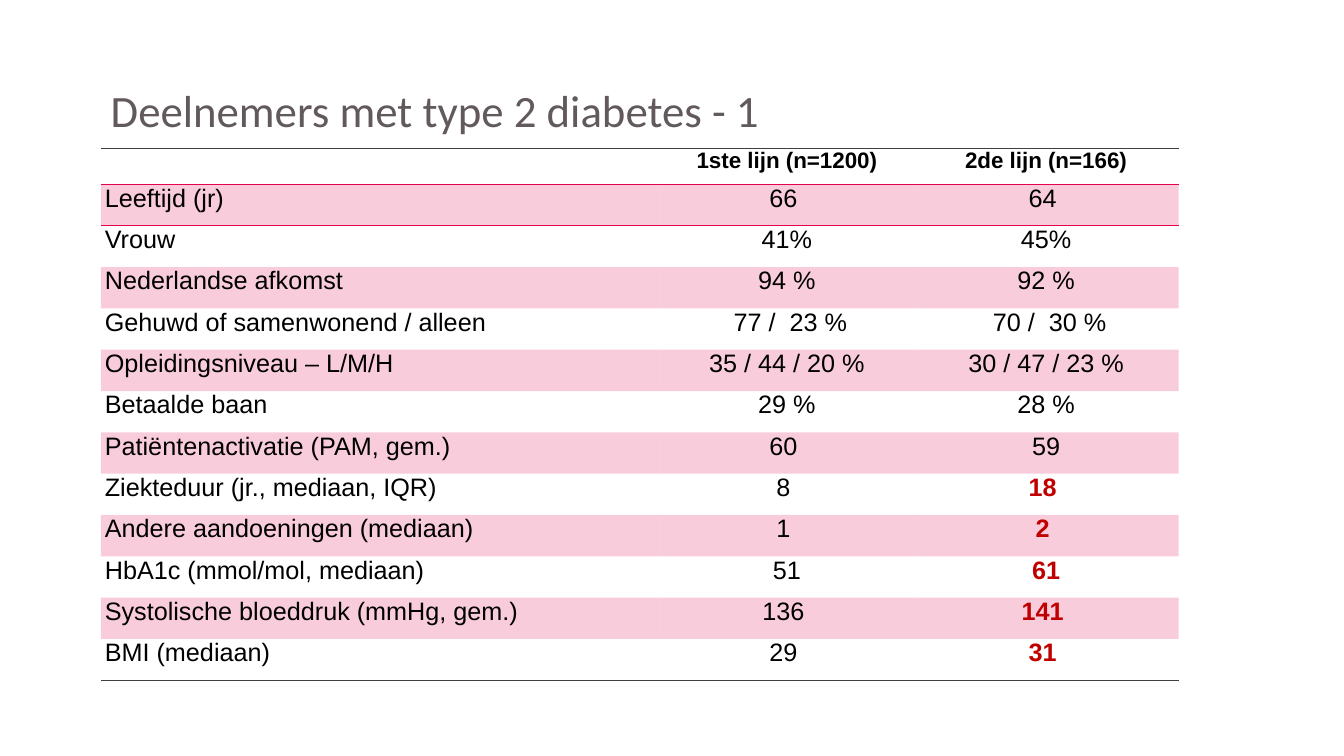
from lxml import etree
from pptx import Presentation, util as u
from pptx.dml.color import RGBColor
from pptx.enum import text as t
from pptx.oxml import ns

PINK, RED, DARK = "E50051", "C00000", "404040"
PLAIN = "{2D5ABB26-0587-4C30-8999-92F81FD0307C}"


def paint(fill, color):
    fill.solid()
    fill.fore_color.rgb = RGBColor.from_string(color)


def write(frame, words, size=18, font="Arial", color="000000", bold=False,
          align=t.PP_ALIGN.LEFT, space=1.0):
    para = frame.paragraphs[0]
    para.alignment = align
    para.line_spacing = space
    para.font.size = u.Pt(size)
    run = para.add_run()
    run.text = words
    run.font.size = u.Pt(size)
    run.font.name = font
    run.font.bold = bold
    paint(run.font.fill, color)


rows = [
    ("", "1ste lijn (n=1200)", "2de lijn (n=166)"),
    ("Leeftijd (jr)", "66 ", "64 "),
    ("Vrouw", "41%", "45%"),
    ("Nederlandse afkomst", "94 %", "92 %"),
    ("Gehuwd of samenwonend / alleen", " 77 /  23 %", " 70 /  30 %"),
    ("Opleidingsniveau – L/M/H", "35 / 44 / 20 %", "30 / 47 / 23 %"),
    ("Betaalde baan", "29 %", "28 %"),
    ("Patiëntenactivatie (PAM, gem.)", "60 ", "59"),
    ("Ziekteduur (jr., mediaan, IQR)", "8 ", "18 "),
    ("Andere aandoeningen (mediaan)", "1 ", "2 "),
    ("HbA1c (mmol/mol, mediaan)", " 51 ", " 61 "),
    ("Systolische bloeddruk (mmHg, gem.)", "136 ", "141 "),
    ("BMI (mediaan)", "29 ", "31 "),
]
last = len(rows) - 1
first_red = 8
widths = (5.55, 2.51, 2.63)
head, step = 0.36, 0.41
left, top = 1, 1.47

deck = Presentation()
deck.slide_width, deck.slide_height = u.Inches(13.33), u.Inches(7.5)
slide = deck.slides.add_slide(deck.slide_layouts[6])

grid = slide.shapes.add_table(
    len(rows), len(widths), u.Inches(left), u.Inches(top),
    u.Inches(sum(widths)), u.Inches(head + last * step)).table
grid.horz_banding = False
grid._tbl.tblPr.find(ns.qn("a:tableStyleId")).text = PLAIN
for col, width in zip(grid.columns, widths):
    col.width = u.Inches(width)

for r, row in enumerate(rows):
    grid.rows[r].height = u.Inches(step if r else head)
    lines = {0: {"lnT": DARK, "lnB": PINK}, 1: {"lnT": PINK},
             last: {"lnB": DARK}}.get(r, {})
    for c, words in enumerate(row):
        cell = grid.cell(r, c)
        cell.margin_left = cell.margin_right = u.Inches(0.04)
        cell.margin_top = cell.margin_bottom = 0
        red = c == 2 and r >= first_red
        write(cell.text_frame, words, size=18 if r else 16,
              color=RED if red else "000000", bold=red or r == 0,
              align=t.PP_ALIGN.CENTER if c else t.PP_ALIGN.LEFT)
        props = cell._tc.get_or_add_tcPr()
        for side, color in lines.items():
            line = etree.SubElement(props, ns.qn("a:" + side), w=str(u.Pt(1)))
            solid = etree.SubElement(line, ns.qn("a:solidFill"))
            etree.SubElement(solid, ns.qn("a:srgbClr"), val=color)
        if r % 2:
            paint(cell.fill, PINK)
            tint = props.find(ns.qn("a:solidFill")).find(ns.qn("a:srgbClr"))
            etree.SubElement(tint, ns.qn("a:alpha"), val="20000")
        else:
            cell.fill.background()

title = slide.shapes.add_textbox(
    u.Inches(left), u.Inches(0.4), u.Inches(12.33), u.Inches(1.45)).text_frame
title.word_wrap = True
title.vertical_anchor = t.MSO_ANCHOR.MIDDLE
write(title, "Deelnemers met type 2 diabetes - 1", size=32, font="Calibri",
      color="61595D", space=0.9)

deck.save("out.pptx")
